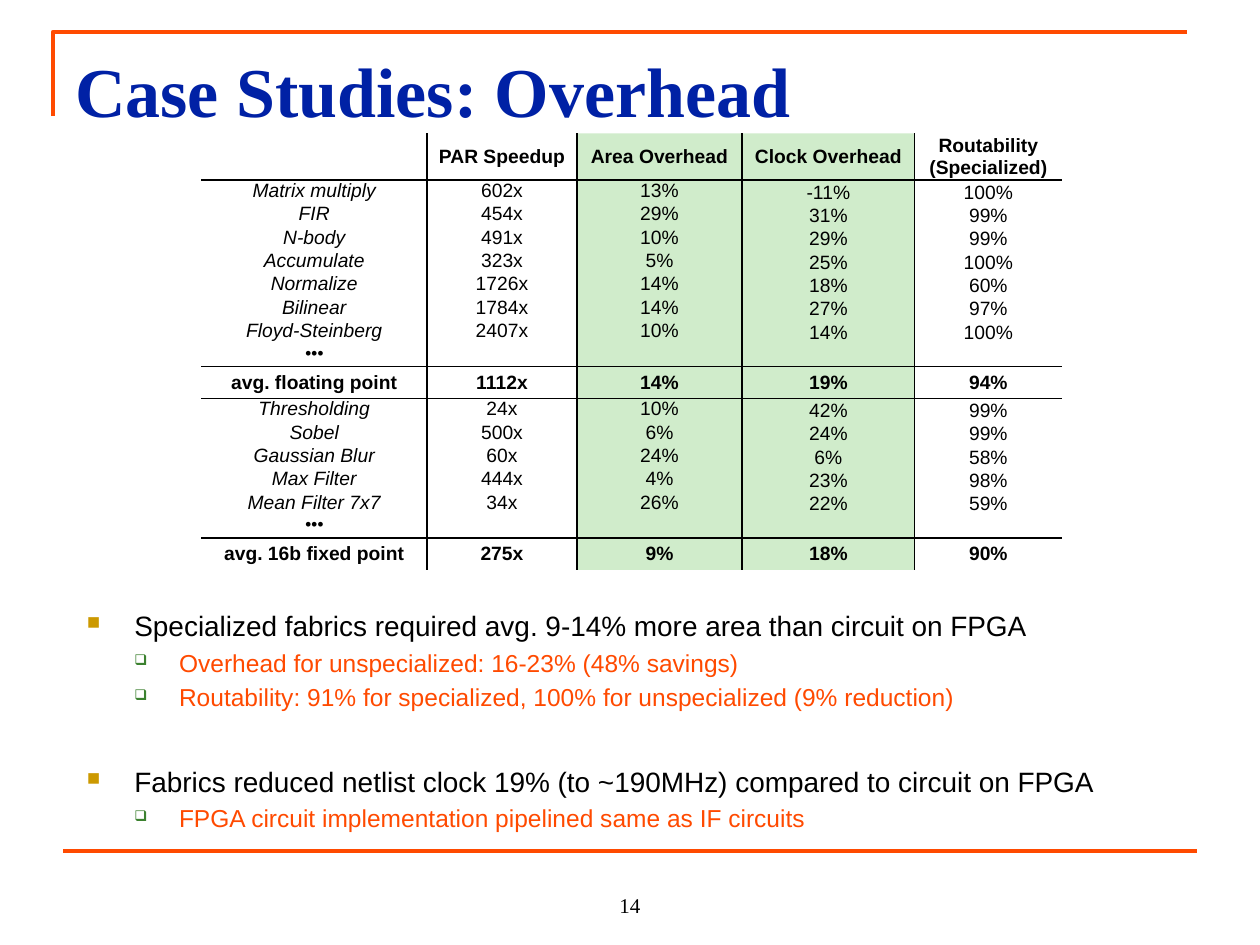
import pptx
import pptx.dml.color
import pptx.enum.shapes
import pptx.enum.text
import pptx.oxml.ns
import pptx.util
from lxml import etree

Cm, Pt = pptx.util.Cm, pptx.util.Pt
qn = pptx.oxml.ns.qn
ALIGN = pptx.enum.text.PP_ALIGN
ANCHOR = pptx.enum.text.MSO_ANCHOR

THEME = {
    "sans": "Arial", "serif": "Times New Roman",
    "ink": "000000", "title": "0021A5", "accent": "FF4A00", "paper": "FFFFFF",
    "highlight": "D0ECCB", "square": "CC9900", "box": "3B812F",
    "title_size": 40, "point_size": 16, "detail_size": 14,
    "number_size": 12, "table_size": 11, "dots_size": 10,
    "rule_width": 2.25, "border_width": 1,
}

TITLE = "Case Studies: Overhead"
PAGE_NUMBER = "14"
HEADINGS = ("", "PAR Speedup", "Area Overhead", "Clock Overhead", "Routability (Specialized)")
DOTS = ("•••", "", "", "", "")
GROUPS = [
    (
        [
            ("Matrix multiply", "602x", "13%", "-11%", "100%"),
            ("FIR", "454x", "29%", "31%", "99%"),
            ("N-body", "491x", "10%", "29%", "99%"),
            ("Accumulate", "323x", "5%", "25%", "100%"),
            ("Normalize", "1726x", "14%", "18%", "60%"),
            ("Bilinear", "1784x", "14%", "27%", "97%"),
            ("Floyd-Steinberg", "2407x", "10%", "14%", "100%"),
        ],
        ("avg. floating point", "1112x", "14%", "19%", "94%"),
    ),
    (
        [
            ("Thresholding", "24x", "10%", "42%", "99%"),
            ("Sobel", "500x", "6%", "24%", "99%"),
            ("Gaussian Blur", "60x", "24%", "6%", "58%"),
            ("Max Filter", "444x", "4%", "23%", "98%"),
            ("Mean Filter 7x7", "34x", "26%", "22%", "59%"),
        ],
        ("avg. 16b fixed point", "275x", "9%", "18%", "90%"),
    ),
]
FINDINGS = [
    ("Specialized fabrics required avg. 9-14% more area than circuit on FPGA", [
        "Overhead for unspecialized: 16-23% (48% savings)",
        "Routability: 91% for specialized, 100% for unspecialized (9% reduction)",
    ]),
    ("Fabrics reduced netlist clock 19% (to ~190MHz) compared to circuit on FPGA", [
        "FPGA circuit implementation pipelined same as IF circuits",
    ]),
]

TABLE_LEFT, TABLE_TOP = 4.06, 2.69
COLUMN_WIDTHS = (4.55, 3.02, 3.33, 3.48, 2.97)
ROW_HEIGHTS = {"heading": 0.94, "case": 0.47, "dots": 0.47, "average": 0.64}
HIGHLIGHTED = (2, 3)


def rgb(key):
    return pptx.dml.color.RGBColor.from_string(THEME[key])


def write(paragraph, text, size="table_size", font="sans", color="ink", bold=False,
          italic=False, align=ALIGN.LEFT, before=0, after=0):
    paragraph.alignment = align
    paragraph.space_before, paragraph.space_after = Pt(before), Pt(after)
    if not text:
        etree.SubElement(paragraph._p, qn("a:endParaRPr"), sz=str(THEME[size] * 100))
        return
    run = paragraph.add_run()
    run.text = text
    run.font.size, run.font.name = Pt(THEME[size]), THEME[font]
    run.font.bold, run.font.italic = bold, italic
    run.font.color.rgb = rgb(color)


def add_frame(slide, left, top, width, height, anchor):
    frame = slide.shapes.add_textbox(Cm(left), Cm(top), Cm(width), Cm(height)).text_frame
    frame.word_wrap = True
    frame.vertical_anchor = anchor
    return frame


def style_rule(rule):
    rule.line.color.rgb = rgb("accent")
    rule.line.width = Pt(THEME["rule_width"])


def add_rules(slide):
    builder = slide.shapes.build_freeform(Cm(1.07), Cm(2.34))
    builder.add_line_segments([(Cm(1.07), Cm(0.64)), (Cm(23.93), Cm(0.64))], close=False)
    corner = builder.convert_to_shape()
    corner.shadow.inherit = False
    corner.fill.background()
    style_rule(corner)
    footer = slide.shapes.add_connector(
        pptx.enum.shapes.MSO_CONNECTOR.STRAIGHT, Cm(1.27), Cm(17.15), Cm(24.13), Cm(17.15))
    etree.SubElement(footer._element.spPr, qn("a:effectLst"))
    style_rule(footer)


def set_borders(cell, visible):
    properties = cell._tc.get_or_add_tcPr()
    for side in "LRTB":
        line = etree.SubElement(properties, qn("a:ln" + side),
                                w=str(Pt(THEME["border_width"])))
        if side in visible:
            fill = etree.SubElement(line, qn("a:solidFill"))
            etree.SubElement(fill, qn("a:srgbClr"), val=THEME["ink"])
        else:
            etree.SubElement(line, qn("a:noFill"))


def add_results(slide):
    rows = [("heading", HEADINGS)]
    for cases, average in GROUPS:
        rows += [("case", case) for case in cases]
        rows += [("dots", DOTS), ("average", average)]
    height = sum(ROW_HEIGHTS[role] for role, _ in rows)

    for column in HIGHLIGHTED:
        band = slide.shapes.add_shape(
            pptx.enum.shapes.MSO_SHAPE.RECTANGLE,
            Cm(TABLE_LEFT + sum(COLUMN_WIDTHS[:column])), Cm(TABLE_TOP),
            Cm(COLUMN_WIDTHS[column]), Cm(height))
        band.shadow.inherit = False
        band.fill.solid()
        band.fill.fore_color.rgb = rgb("highlight")
        band.line.fill.background()

    results = slide.shapes.add_table(
        len(rows), len(HEADINGS), Cm(TABLE_LEFT), Cm(TABLE_TOP),
        Cm(sum(COLUMN_WIDTHS)), Cm(height)).table
    results.first_row = results.horz_banding = False
    for column, width in enumerate(COLUMN_WIDTHS):
        results.columns[column].width = Cm(width)

    last_row, last_column = len(rows) - 1, len(HEADINGS) - 1
    for index, (role, values) in enumerate(rows):
        results.rows[index].height = Cm(ROW_HEIGHTS[role])
        strong = role in ("heading", "average")
        above = index > 0 and (role == "average" or rows[index - 1][0] in ("heading", "average"))
        below = index < last_row and role != "case"
        for column, value in enumerate(values):
            cell = results.cell(index, column)
            set_borders(cell, "L" * (column > 0) + "R" * (column < last_column)
                        + "T" * above + "B" * below)
            if column == 1:
                cell.fill.solid()
                cell.fill.fore_color.rgb = rgb("paper")
            else:
                cell.fill.background()
            cell.margin_left = cell.margin_right = Cm(0.15)
            cell.margin_top = cell.margin_bottom = 0
            low = role == "case" and column >= 3
            cell.vertical_anchor = (
                ANCHOR.MIDDLE if strong else ANCHOR.BOTTOM if low else ANCHOR.TOP)
            write(cell.text_frame.paragraphs[0], value,
                  size="dots_size" if role == "dots" else "table_size",
                  bold=strong, italic=column == 0 and not strong,
                  align=ALIGN.CENTER, after=4 if low else 0)


def add_bullet(paragraph, symbol, color, percent, margin, hanging):
    properties = paragraph._p.get_or_add_pPr()
    properties.set("marL", str(Cm(margin)))
    properties.set("indent", str(-Cm(hanging)))
    tint = etree.SubElement(properties, qn("a:buClr"))
    etree.SubElement(tint, qn("a:srgbClr"), val=THEME[color])
    etree.SubElement(properties, qn("a:buSzPct"), val=str(percent * 1000))
    etree.SubElement(properties, qn("a:buChar"), char=symbol)


def add_findings(slide):
    frame = add_frame(slide, 1.5, 12.15, 22.35, 4.72, ANCHOR.TOP)
    for index, (point, details) in enumerate(FINDINGS):
        paragraph = frame.add_paragraph() if index else frame.paragraphs[0]
        add_bullet(paragraph, "■", "square", 65, 0.96, 0.96)
        write(paragraph, point, size="point_size", before=30 if index else 0)
        for detail in details:
            paragraph = frame.add_paragraph()
            paragraph.level = 1
            add_bullet(paragraph, "❑", "box", 60, 1.86, 0.9)
            write(paragraph, detail, size="detail_size", color="accent", before=3)


def main():
    deck = pptx.Presentation()
    deck.slide_width, deck.slide_height = Cm(25.4), Cm(19.05)
    slide = deck.slides.add_slide(deck.slide_layouts[6])
    add_rules(slide)
    heading = add_frame(slide, 1.27, 0.76, 22.86, 1.9, ANCHOR.BOTTOM)
    heading.margin_bottom = 0
    write(heading.paragraphs[0], TITLE, size="title_size", font="serif", color="title", bold=True)
    number = add_frame(slide, 10.16, 17.35, 5.08, 1.27, ANCHOR.BOTTOM)
    write(number.paragraphs[0], PAGE_NUMBER, size="number_size", font="serif", align=ALIGN.CENTER)
    add_results(slide)
    add_findings(slide)
    deck.save("out.pptx")


if __name__ == "__main__":
    main()
